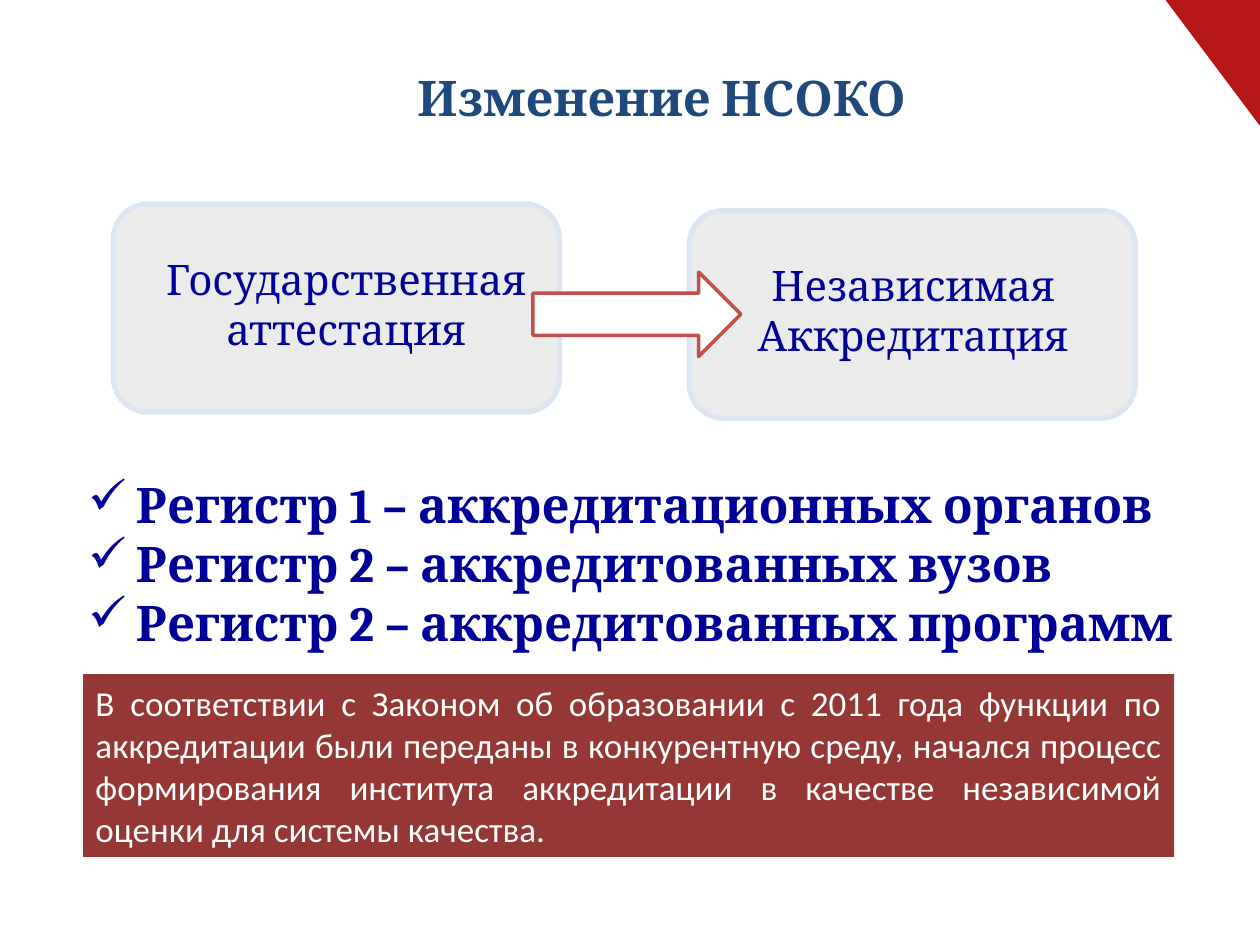
from dataclasses import dataclass

from lxml import etree
from pptx import Presentation
from pptx.dml.color import RGBColor
from pptx.enum.shapes import MSO_SHAPE
from pptx.enum.text import MSO_ANCHOR, PP_ALIGN
from pptx.oxml.ns import qn
from pptx.util import Inches, Pt

ROUND = MSO_SHAPE.ROUNDED_RECTANGLE
RECT = MSO_SHAPE.RECTANGLE
ARROW = MSO_SHAPE.RIGHT_ARROW
CORNER = MSO_SHAPE.RIGHT_TRIANGLE
CENTER = PP_ALIGN.CENTER
JUSTIFY = PP_ALIGN.JUSTIFY
TOP = MSO_ANCHOR.TOP
MIDDLE = MSO_ANCHOR.MIDDLE


@dataclass(frozen=True)
class Theme:
    """Colours, fonts and type sizes of the slide."""
    head: str = "1F497D"
    ink: str = "000099"
    card: str = "EBEBEB"
    edge: str = "DCE6F2"
    band: str = "953735"
    arrow: str = "C0504D"
    corner: str = "B51717"
    white: str = "FFFFFF"
    serif: str = "Cambria"
    sans: str = "Calibri"
    large: int = 28
    mid: int = 24
    small: int = 20


class Page:
    """Draws styled elements on one slide."""

    def __init__(self, slide, theme):
        """Keep the slide and its theme."""
        self.slide = slide
        self.theme = theme

    def shape(self, kind, box, fill, line=None, width=0, turn=0):
        """Add a flat preset shape with an optional outline."""
        item = self.slide.shapes.add_shape(kind, *map(Inches, box))
        item.shadow.inherit = False
        item.rotation = turn
        item.fill.solid()
        item.fill.fore_color.rgb = RGBColor.from_string(fill)
        if line:
            item.line.color.rgb = RGBColor.from_string(line)
            item.line.width = Pt(width)
        else:
            item.line.fill.background()
        return item

    def label(self, item, lines, align, size, color, face, bold=False,
              anchor=TOP, mark=None):
        """Fill an element with styled paragraphs."""
        frame = item.text_frame
        frame.word_wrap = True
        frame.vertical_anchor = anchor
        form = {"name": face, "size": Pt(size), "bold": bold}
        for i, line in enumerate(lines):
            para = frame.add_paragraph() if i else frame.paragraphs[0]
            para.alignment = align
            run = para.add_run()
            run.text = line
            for key, value in form.items():
                setattr(run.font, key, value)
            run.font.color.rgb = RGBColor.from_string(color)
            if mark:
                self.bullet(para, mark)

    def bullet(self, para, mark):
        """Give a paragraph a hanging bullet."""
        props = para._p.get_or_add_pPr()
        props.set("marL", str(Inches(0.38)))
        props.set("indent", str(Inches(-0.38)))
        etree.SubElement(props, qn("a:buChar")).set("char", mark)

    def text(self, box, lines, align, size, color, **form):
        """Add a serif text box."""
        item = self.slide.shapes.add_textbox(*map(Inches, box))
        self.label(item, lines, align, size, color, self.theme.serif, **form)


def main():
    """Build and save the slide."""
    deck = Presentation()
    deck.slide_width, deck.slide_height = Inches(10), Inches(7.5)
    look = Theme()
    page = Page(deck.slides.add_slide(deck.slide_layouts[6]), look)

    page.text((2.48, 0.49, 5.54, 0.57), ["Изменение НСОКО"], CENTER,
              look.large, look.head, bold=True)

    cards = [
        (0.9, 1.62, 0.6, "Государственная аттестация"),
        (5.47, 1.67, 5.1, "Независимая Аккредитация"),
    ]
    for left, top, start, name in cards:
        page.shape(ROUND, (left, top, 3.54, 1.65), look.card, look.edge, 3)
        page.text((start, top + 0.34, 4.29, 0.91), [name], CENTER,
                  look.mid, look.ink)
    page.shape(ARROW, (4.23, 2.16, 1.65, 0.67), look.white, look.arrow, 2)

    page.text((0.6, 3.72, 8.98, 1.51), [
        "Регистр 1 – аккредитационных органов",
        "Регистр 2 – аккредитованных вузов",
        "Регистр 2 – аккредитованных программ",
    ], JUSTIFY, look.large, look.ink, bold=True, mark="✓")

    band = page.shape(RECT, (0.66, 5.35, 8.66, 1.45), look.band)
    page.label(band, [
        "В соответствии с Законом об образовании с 2011 года функции по "
        "аккредитации были переданы в конкурентную среду, начался процесс "
        "формирования института аккредитации в качестве независимой "
        "оценки для системы качества."
    ], JUSTIFY, look.small, look.white, look.sans, anchor=MIDDLE)

    page.shape(CORNER, (9.25, 0, 0.75, 1), look.corner, turn=180)
    deck.save("out.pptx")


if __name__ == "__main__":
    main()
